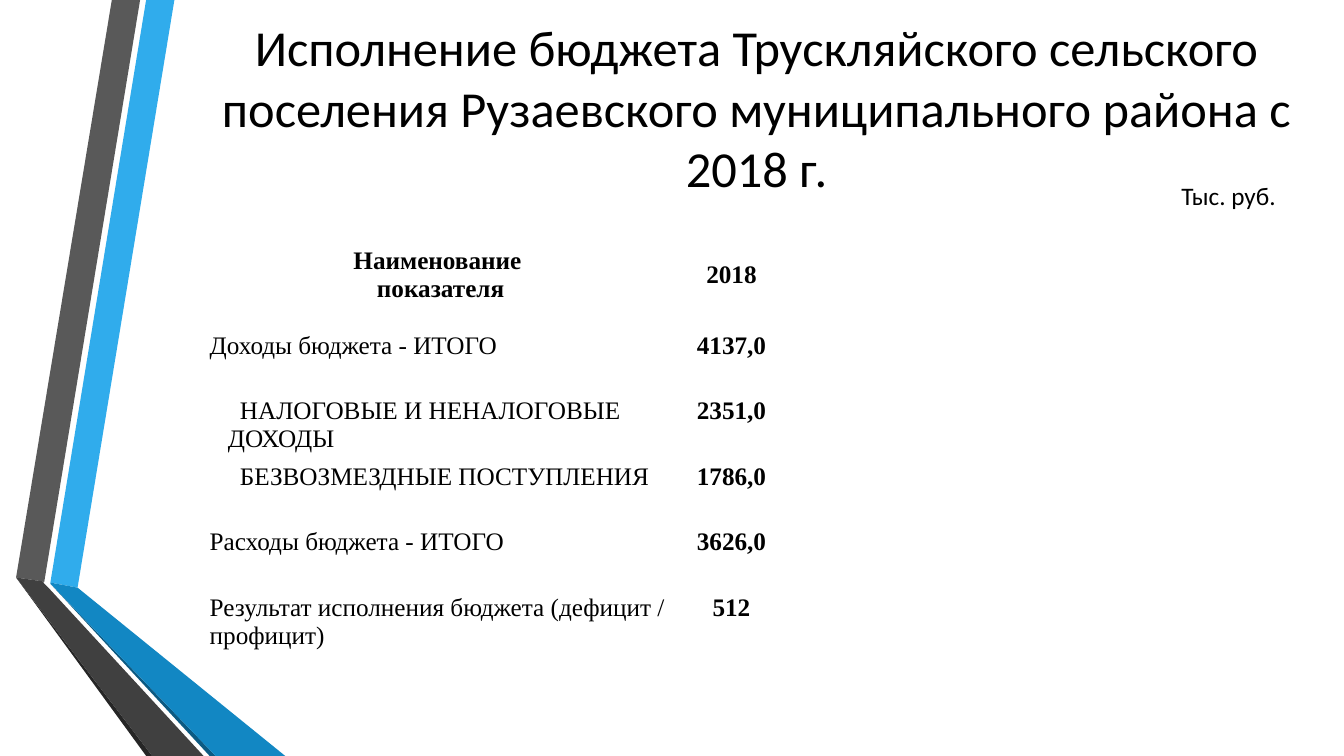
from dataclasses import dataclass

from lxml.etree import SubElement
from pptx import Presentation
from pptx.dml.color import RGBColor
from pptx.enum.text import MSO_ANCHOR as Anchor, PP_ALIGN as Align
from pptx.oxml.ns import qn
from pptx.util import Inches, Pt

BLACK = RGBColor(0x00, 0x00, 0x00)
WHITE = RGBColor(0xFF, 0xFF, 0xFF)
SKY = RGBColor(0x30, 0xAC, 0xEC)
BLUE = RGBColor(0x12, 0x87, 0xC3)
NAVY = RGBColor(0x0C, 0x5A, 0x82)
GRAY = RGBColor(0x59, 0x59, 0x59)
DARK_GRAY = RGBColor(0x40, 0x40, 0x40)
CHARCOAL = RGBColor(0x26, 0x26, 0x26)


@dataclass
class Ribbon:
    color: RGBColor
    points: list[tuple[float, float]]


@dataclass
class BudgetRow:
    name: str
    amount: str
    header: bool = False
    sub_item: bool = False


RIBBONS = [
    Ribbon(SKY, [(0.5, 5.78), (0.77, 5.83), (1.73, 0), (1.45, 0)]),
    Ribbon(GRAY, [(1.39, 0), (1.11, 0), (0.16, 5.73), (0.44, 5.77)]),
    Ribbon(CHARCOAL, [(0.16, 5.73), (1.45, 7.5), (1.51, 7.5)]),
    Ribbon(NAVY, [(0.5, 5.79), (2.08, 7.5), (2.14, 7.5)]),
    Ribbon(BLUE, [(0.5, 5.79), (2.14, 7.5), (2.83, 7.5), (0.77, 5.83), (0.5, 5.78)]),
    Ribbon(DARK_GRAY, [(2.02, 7.5), (0.48, 5.83), (0.43, 5.78), (0.44, 5.77),
                       (0.16, 5.73), (1.51, 7.5)]),
]

BUDGET = [
    BudgetRow("Наименование \vпоказателя", "2018", header=True),
    BudgetRow("Доходы бюджета - ИТОГО", "4137,0"),
    BudgetRow("НАЛОГОВЫЕ И НЕНАЛОГОВЫЕ ДОХОДЫ", "2351,0", sub_item=True),
    BudgetRow("БЕЗВОЗМЕЗДНЫЕ ПОСТУПЛЕНИЯ", "1786,0", sub_item=True),
    BudgetRow("Расходы бюджета - ИТОГО", "3626,0"),
    BudgetRow("Результат исполнения бюджета (дефицит / профицит)", "512"),
]
COLUMN_WIDTHS = (4.6, 1.17)
HEADER_HEIGHT, ROW_HEIGHT = 1.11, 0.65


def style_paragraph(p, size: float, face: str, bold: bool, align: Align) -> None:
    p.alignment = align
    p.font.size, p.font.name, p.font.bold = Pt(size), face, bold
    p.font.color.rgb = BLACK


def add_ribbon(slide, ribbon: Ribbon) -> None:
    start, *rest = [(Inches(x), Inches(y)) for x, y in ribbon.points]
    builder = slide.shapes.build_freeform(*start)
    builder.add_line_segments(rest)
    sp = builder.convert_to_shape()
    sp.shadow.inherit = False
    sp.fill.solid()
    sp.fill.fore_color.rgb = ribbon.color
    sp.line.fill.background()


def add_label(slide, text: str, box: tuple[float, float, float, float], size: float,
              align: Align, anchor: Anchor, wrap: bool) -> None:
    tf = slide.shapes.add_textbox(*map(Inches, box)).text_frame
    tf.word_wrap, tf.vertical_anchor = wrap, anchor
    p = tf.paragraphs[0]
    p.text = text
    style_paragraph(p, size, "Calibri", False, align)


def add_borders(cell) -> None:
    tc_pr = cell._tc.get_or_add_tcPr()
    for side in ("a:lnL", "a:lnR", "a:lnT", "a:lnB"):
        line = SubElement(tc_pr, qn(side), w=str(Pt(1)))
        fill = SubElement(line, qn("a:solidFill"))
        SubElement(fill, qn("a:srgbClr"), val=str(WHITE))


def fill_cell(cell, text: str, bold: bool, centred: bool, header: bool, sub_item: bool) -> None:
    add_borders(cell)
    cell.fill.background()
    cell.margin_left = Inches(0.19 if sub_item else 0.01)
    cell.margin_top = cell.margin_right = Inches(0.01)
    cell.margin_bottom = 0
    cell.vertical_anchor = Anchor.MIDDLE if header else Anchor.TOP
    p = cell.text_frame.paragraphs[0]
    p.text = text
    style_paragraph(p, 18, "Times New Roman", bold, Align.CENTER if centred else Align.LEFT)
    if sub_item:
        p._p.get_or_add_pPr().set("indent", str(Inches(0.12)))


def add_budget_table(slide, rows: list[BudgetRow]) -> None:
    height = HEADER_HEIGHT + ROW_HEIGHT * (len(rows) - 1)
    table = slide.shapes.add_table(
        len(rows), len(COLUMN_WIDTHS), Inches(2.07), Inches(2.17),
        Inches(sum(COLUMN_WIDTHS)), Inches(height)).table
    table.first_row = table.horz_banding = False
    for column, width in zip(table.columns, COLUMN_WIDTHS):
        column.width = Inches(width)
    for i, row in enumerate(rows):
        table.rows[i].height = Inches(HEADER_HEIGHT if row.header else ROW_HEIGHT)
        fill_cell(table.cell(i, 0), row.name, row.header, row.header, row.header, row.sub_item)
        fill_cell(table.cell(i, 1), row.amount, True, True, row.header, False)


def main() -> None:
    prs = Presentation()
    prs.slide_width, prs.slide_height = Inches(13.33), Inches(7.5)
    slide = prs.slides.add_slide(prs.slide_layouts[6])

    # Folded ribbons on the left
    for ribbon in RIBBONS:
        add_ribbon(slide, ribbon)

    # Title, table and unit of measure
    add_label(slide, "Исполнение бюджета Трускляйского сельского поселения "
              "Рузаевского муниципального района с 2018 г.",
              (1.8, 0.4, 11.41, 1.33), 36, Align.CENTER, Anchor.MIDDLE, True)
    add_budget_table(slide, BUDGET)
    add_label(slide, "Тыс. руб.", (11.62, 1.74, 1.17, 0.4), 18,
              Align.LEFT, Anchor.TOP, False)

    prs.save("out.pptx")


if __name__ == "__main__":
    main()
